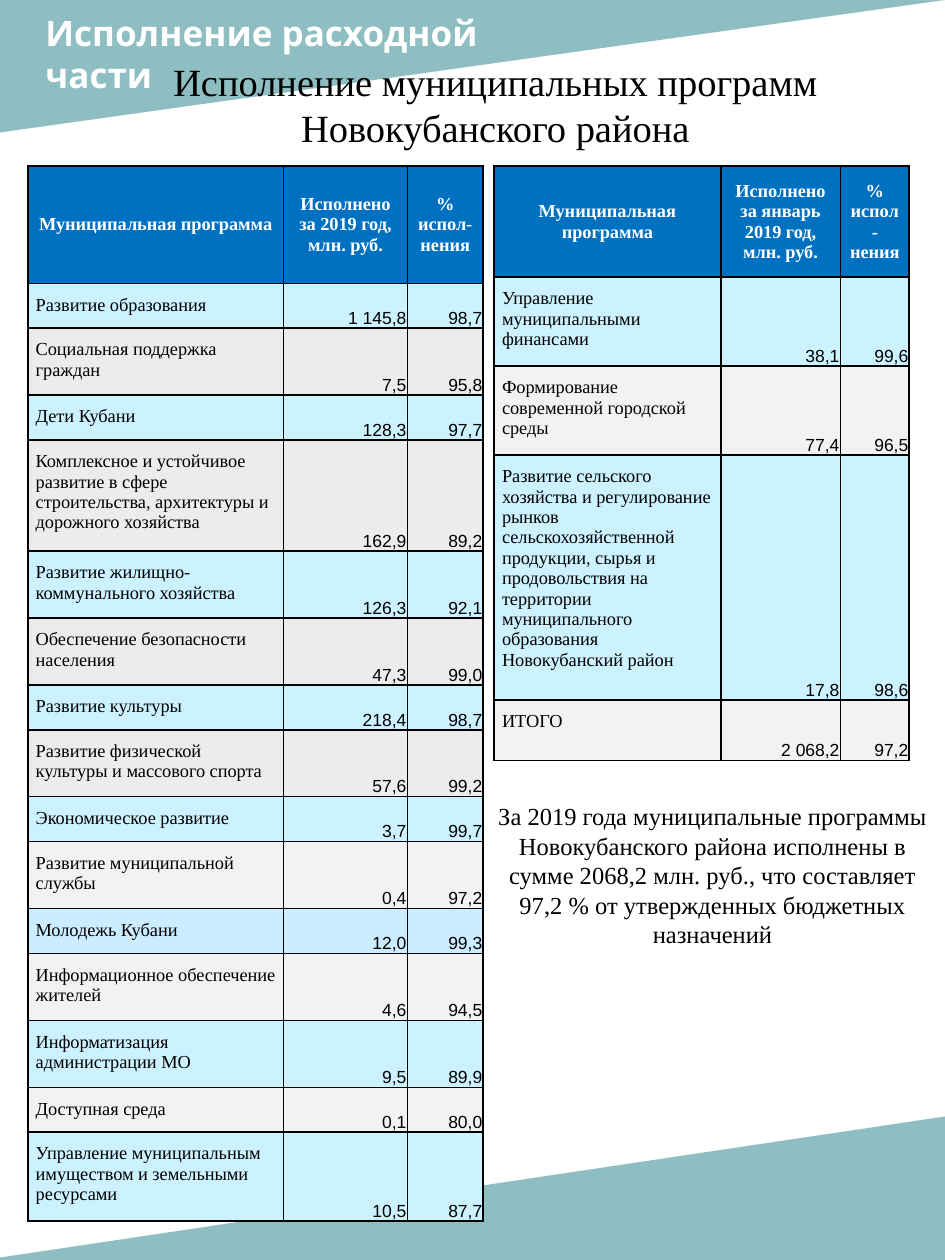
"""Builds the slide on how the district's municipal programmes were carried out."""
from lxml.etree import SubElement
from pptx import Presentation
from pptx.dml.color import RGBColor
from pptx.enum.shapes import MSO_SHAPE as Shape
from pptx.enum.text import MSO_ANCHOR as Anchor, MSO_AUTO_SIZE as Fit, PP_ALIGN as Align
from pptx.oxml.ns import qn
from pptx.util import Cm, Pt

TEAL = RGBColor(0x51, 0x9A, 0xA0)
BLUE = RGBColor(0x00, 0x70, 0xC0)
PALE = RGBColor(0xCD, 0xF2, 0xFF)
SKY = RGBColor(0xCC, 0xEC, 0xFF)
GREY = RGBColor(0xEC, 0xEC, 0xEC)
LIGHT = RGBColor(0xF2, 0xF2, 0xF2)
WHITE = RGBColor(0xFF, 0xFF, 0xFF)
BLACK = RGBColor(0x00, 0x00, 0x00)
SERIF = "Times New Roman"

LEFT = [
    ("Развитие образования", "1 145,8", "98,7", 1, PALE),
    ("Социальная поддержка граждан", "7,5", "95,8", 2, GREY),
    ("Дети Кубани", "128,3", "97,7", 1, PALE),
    ("Комплексное и устойчивое развитие в сфере строительства, "
     "архитектуры и дорожного хозяйства", "162,9", "89,2", 4, GREY),
    ("Развитие жилищно-коммунального хозяйства", "126,3", "92,1", 2, PALE),
    ("Обеспечение безопасности населения", "47,3", "99,0", 2, GREY),
    ("Развитие культуры", "218,4", "98,7", 1, PALE),
    ("Развитие физической культуры и массового спорта", "57,6", "99,2", 2, GREY),
    ("Экономическое развитие", "3,7", "99,7", 1, PALE),
    ("Развитие муниципальной службы", "0,4", "97,2", 2, LIGHT),
    ("Молодежь Кубани", "12,0", "99,3", 1, SKY),
    ("Информационное обеспечение жителей", "4,6", "94,5", 2, LIGHT),
    ("Информатизация администрации МО", "9,5", "89,9", 2, PALE),
    ("Доступная среда", "0,1", "80,0", 1, LIGHT),
    ("Управление муниципальным имуществом и земельными ресурсами",
     "10,5", "87,7", 3, PALE),
]
RIGHT = [
    ("Управление муниципальными финансами", "38,1", "99,6", 3, PALE),
    ("Формирование современной городской среды", "77,4", "96,5", 3, LIGHT),
    ("Развитие сельского хозяйства и регулирование рынков "
     "сельскохозяйственной продукции, сырья и продовольствия на территории "
     "муниципального образования Новокубанский район", "17,8", "98,6", 10, PALE),
    ("ИТОГО", "2 068,2", "97,2", 1, LIGHT),
]


class Deck:
    """Holds the style and the current slide."""

    def __init__(self, wide, high):
        self.show = Presentation()
        self.show.slide_width, self.show.slide_height = Cm(wide), Cm(high)
        self.slide = self.show.slides.add_slide(self.show.slide_layouts[5])

    def style(self, frame, text, size, font, color, align, bold=False):
        frame.text = text
        for para in frame.paragraphs:
            para.alignment = align
            for run in para.runs:
                run.font.size, run.font.name = Pt(size), font
                run.font.bold, run.font.color.rgb = bold, color

    def wedge(self, x, y, w, h, flip):
        shape = self.slide.shapes.add_shape(
            Shape.RIGHT_TRIANGLE, Cm(x), Cm(y), Cm(w), Cm(h))
        shape.shadow.inherit = False
        shape.rotation = 180
        shape.element.spPr.xfrm.set(flip, "1")
        shape.fill.solid()
        shape.fill.fore_color.rgb = TEAL
        shape.line.fill.background()
        color = shape.element.spPr.find(".//" + qn("a:srgbClr"))
        SubElement(color, qn("a:alpha"), val="64000")

    def title(self, text, x, y, w, h):
        box = self.slide.shapes.title
        box.left, box.top, box.width, box.height = Cm(x), Cm(y), Cm(w), Cm(h)
        self.style(box.text_frame, text, 20, "Karla", WHITE, Align.LEFT, True)
        box.text_frame.vertical_anchor = Anchor.TOP
        box.text_frame.auto_size = Fit.NONE
        self.slide.shapes.element.append(box.element)

    def text(self, text, x, y, w, h, size):
        box = self.slide.shapes.add_textbox(Cm(x), Cm(y), Cm(w), Cm(h))
        box.text_frame.word_wrap = True
        self.style(box.text_frame, text, size, SERIF, BLACK, Align.CENTER)

    def cell(self, cell, text, fill, kind):
        size, font, color, align, anchor, side, top, base = {
            "head": (10.5, SERIF, WHITE, Align.CENTER, Anchor.MIDDLE, 0.16, 0.23, 0.23),
            "name": (10.5, SERIF, BLACK, Align.LEFT, Anchor.TOP, 0.16, 0.23, 0.23),
            "sum": (10, "Arial", BLACK, Align.RIGHT, Anchor.BOTTOM, 0.02, 0.02, 0),
        }[kind]
        self.style(cell.text_frame, text, size, font, color, align, kind == "head")
        cell.vertical_anchor = anchor
        cell.margin_left = cell.margin_right = Cm(side)
        cell.margin_top, cell.margin_bottom = Cm(top), Cm(base)
        prop = cell._tc.get_or_add_tcPr()
        for edge in "LRTB":
            line = SubElement(prop, qn("a:ln" + edge), w=str(Pt(1)))
            paint = SubElement(line, qn("a:solidFill"))
            SubElement(paint, qn("a:srgbClr"), val=str(BLACK))
        cell.fill.solid()
        cell.fill.fore_color.rgb = fill

    def table(self, x, y, cols, high, heads, rows):
        sizes = [high] + [0.44 + 0.45 * row[3] for row in rows]
        table = self.slide.shapes.add_table(
            len(sizes), len(cols), Cm(x), Cm(y), Cm(sum(cols)), Cm(sum(sizes))).table
        table.first_row = table.horz_banding = False
        for col, width in zip(table.columns, cols):
            col.width = Cm(width)
        for row, size in zip(table.rows, sizes):
            row.height = Cm(size)
        for i, text in enumerate(heads):
            self.cell(table.cell(0, i), text, BLUE, "head")
        for i, (*texts, _, fill) in enumerate(rows, 1):
            for j, text in enumerate(texts):
                self.cell(table.cell(i, j), text, fill, "sum" if j else "name")
        return table


def main():
    deck = Deck(19.05, 25.4)
    deck.wedge(0, 0, 19.05, 2.67, "flipH")
    deck.wedge(-0.33, 22.5, 19.43, 2.9, "flipV")
    deck.title("Исполнение расходной\nчасти", 0.66, 0.1, 12.37, 1.96)
    deck.text("Исполнение муниципальных программ Новокубанского района",
              1.63, 1.04, 16.71, 2.13, 22)
    name, share = "Муниципальная программа", "% испол-нения"
    deck.table(0.56, 3.35, (5.16, 2.49, 1.53), 2.36,
               (name, "Исполнено за 2019 год, млн. руб.", share), LEFT)
    right = deck.table(9.96, 3.35, (4.57, 2.41, 1.39), 2.22,
                       (name, "Исполнено за январь 2019 год, млн. руб.", share), RIGHT)
    right.rows[len(RIGHT)].height = Cm(1.22)
    deck.text("За 2019 года муниципальные программы Новокубанского района "
              "исполнены в сумме 2068,2 млн. руб., что составляет 97,2 % "
              "от утвержденных бюджетных назначений", 9.6, 16.03, 9.53, 3.25, 14)
    deck.show.save("out.pptx")


if __name__ == "__main__":
    main()
